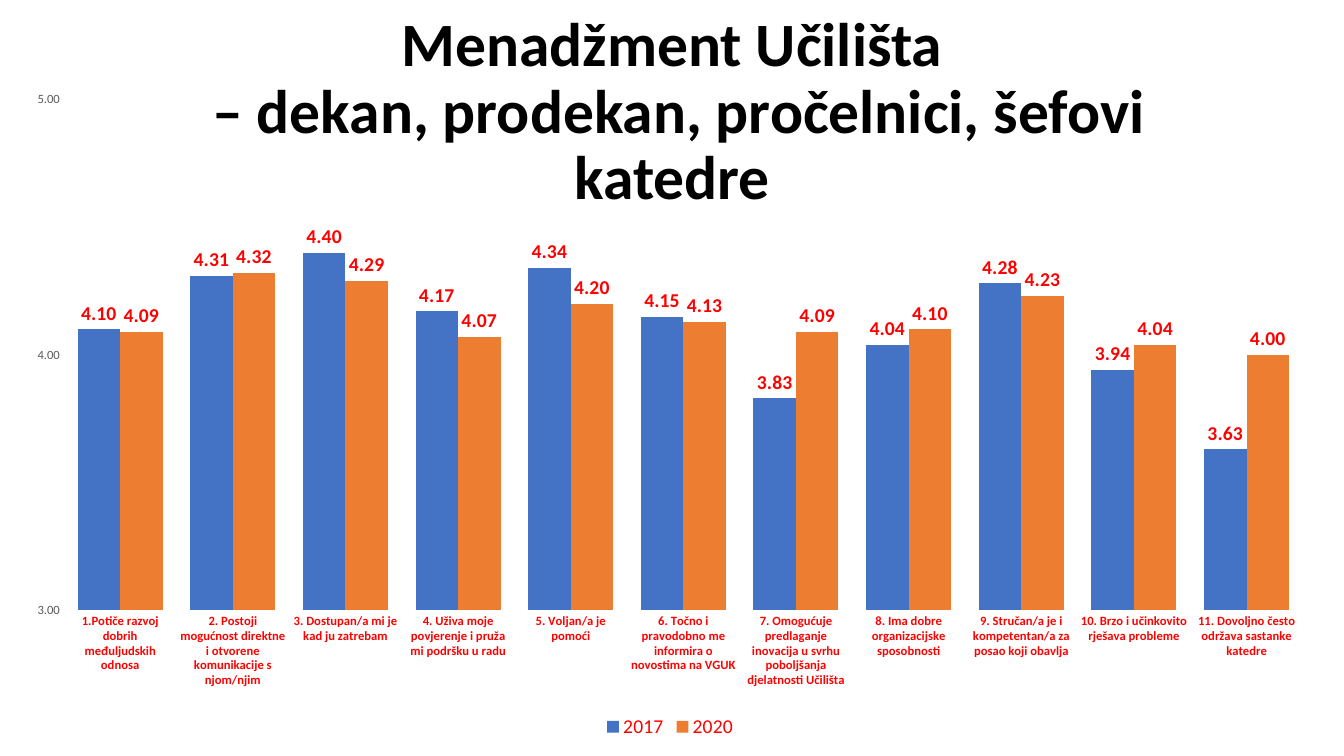
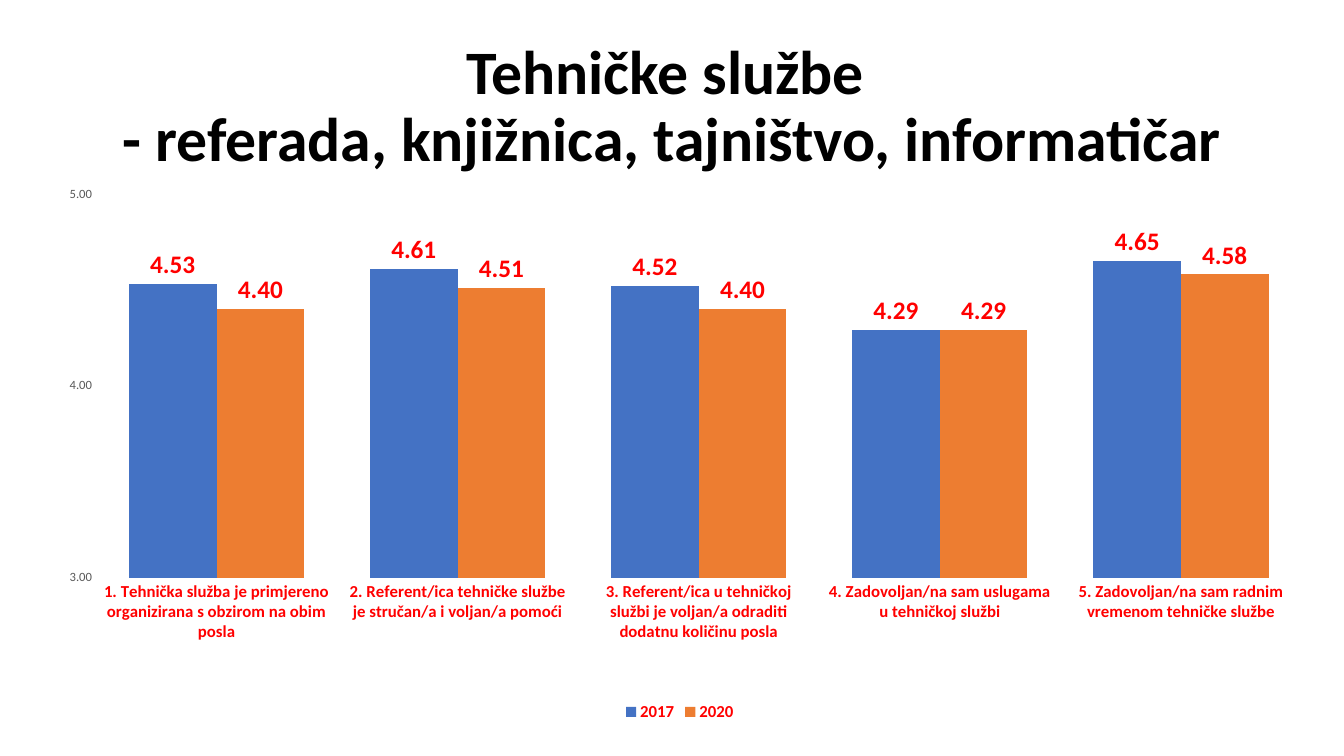
"""Build two survey slides comparing ratings from 2017 and 2020."""
from dataclasses import dataclass

import pptx
import pptx.chart.data
import pptx.dml.color
import pptx.enum.chart
import pptx.enum.text
import pptx.oxml
import pptx.oxml.ns
import pptx.util

Cm = pptx.util.Cm
Pt = pptx.util.Pt

FONT = "Calibri"
COLORS = {
    "title": "000000",
    "accent": "FF0000",
    "scale": "595959",
    "2017": "4472C4",
    "2020": "ED7D31",
}
NUMBER_FORMAT = "0.00"


@dataclass(frozen=True)
class Box:
    left: float
    top: float
    width: float
    height: float

    def lengths(self) -> tuple:
        return Cm(self.left), Cm(self.top), Cm(self.width), Cm(self.height)


@dataclass(frozen=True)
class Rating:
    statement: str
    in_2017: float
    in_2020: float


@dataclass(frozen=True)
class Survey:
    title_lines: tuple[str, ...]
    title_top: float
    title_size: float
    chart_box: Box
    plot_area: Box
    gap_width: int
    statement_size: int
    value_size: int
    legend_size: int
    legend_bold: bool
    ratings: tuple[Rating, ...]


SURVEYS = (
    Survey(
        title_lines=("Menadžment Učilišta", " – dekan, prodekan, pročelnici, šefovi katedre"),
        title_top=1.02,
        title_size=44,
        chart_box=Box(0.28, 2.01, 33.22, 16.71),
        plot_area=Box(0.04, 0.03, 0.94, 0.77),
        gap_width=65,
        statement_size=9,
        value_size=14,
        legend_size=14,
        legend_bold=False,
        ratings=(
            Rating("1.Potiče razvoj dobrih međuljudskih odnosa", 4.10, 4.09),
            Rating("2. Postoji mogućnost direktne i otvorene komunikacije s njom/njim", 4.31, 4.32),
            Rating("3. Dostupan/a mi je kad ju zatrebam", 4.40, 4.29),
            Rating("4. Uživa moje povjerenje i pruža mi podršku u radu", 4.17, 4.07),
            Rating("5. Voljan/a je pomoći", 4.34, 4.20),
            Rating("6. Točno i pravodobno me informira o novostima na VGUK", 4.15, 4.13),
            Rating("7. Omogućuje predlaganje inovacija u svrhu poboljšanja djelatnosti Učilišta", 3.83, 4.09),
            Rating("8. Ima dobre organizacijske sposobnosti", 4.04, 4.10),
            Rating("9. Stručan/a je i kompetentan/a za posao koji obavlja", 4.28, 4.23),
            Rating("10. Brzo i učinkovito rješava probleme", 3.94, 4.04),
            Rating("11. Dovoljno često održava sastanke katedre", 3.63, 4.00),
        ),
    ),
    Survey(
        title_lines=("Tehničke službe ", "- referada, knjižnica, tajništvo, informatičar"),
        title_top=0.89,
        title_size=44.1,
        chart_box=Box(1.14, 4.47, 31.98, 13.82),
        plot_area=Box(0.04, 0.03, 0.95, 0.7),
        gap_width=75,
        statement_size=12,
        value_size=18,
        legend_size=12,
        legend_bold=True,
        ratings=(
            Rating("1. Tehnička služba je primjereno organizirana s obzirom na obim posla", 4.53, 4.40),
            Rating("2. Referent/ica tehničke službe je stručan/a i voljan/a pomoći", 4.61, 4.51),
            Rating("3. Referent/ica u tehničkoj službi je voljan/a odraditi dodatnu količinu posla", 4.52, 4.40),
            Rating("4. Zadovoljan/na sam uslugama u tehničkoj službi", 4.29, 4.29),
            Rating("5. Zadovoljan/na sam radnim vremenom tehničke službe", 4.65, 4.58),
        ),
    ),
)


def rgb(name: str) -> pptx.dml.color.RGBColor:
    return pptx.dml.color.RGBColor.from_string(COLORS[name])


def style_font(font, size: float, color: str, bold: bool = False) -> None:
    font.name = FONT
    font.size = Pt(size)
    font.bold = bold
    font.color.rgb = rgb(color)


def add_title(slide, survey: Survey) -> None:
    title_box = Box(2.34, survey.title_top, 29.21, 3.68)
    frame = slide.shapes.add_textbox(*title_box.lengths()).text_frame
    frame.word_wrap = True
    frame.vertical_anchor = pptx.enum.text.MSO_ANCHOR.MIDDLE
    heading = frame.paragraphs[0]
    heading.alignment = pptx.enum.text.PP_ALIGN.CENTER
    heading.line_spacing = 0.9
    for index, line in enumerate(survey.title_lines):
        if index:
            heading.add_line_break()
        run = heading.add_run()
        run.text = line
        style_font(run.font, survey.title_size, "title", bold=True)


def place_plot(chart, area: Box) -> None:
    plot_area = chart.plots[0]._element.getparent()
    for old_layout in plot_area.findall(pptx.oxml.ns.qn("c:layout")):
        plot_area.remove(old_layout)
    settings = {
        "layoutTarget": "inner", "xMode": "edge", "yMode": "edge",
        "x": area.left, "y": area.top, "w": area.width, "h": area.height,
    }
    children = "".join(f'<c:{tag} val="{value}"/>' for tag, value in settings.items())
    plot_area.insert(0, pptx.oxml.parse_xml(
        f'<c:layout {pptx.oxml.ns.nsdecls("c")}>'
        f"<c:manualLayout>{children}</c:manualLayout></c:layout>"
    ))


def style_axis(axis, size: int, color: str, bold: bool = False) -> None:
    axis.has_major_gridlines = False
    axis.major_tick_mark = pptx.enum.chart.XL_TICK_MARK.NONE
    axis.minor_tick_mark = pptx.enum.chart.XL_TICK_MARK.NONE
    axis.format.line.fill.background()
    style_font(axis.tick_labels.font, size, color, bold)


def style_series(series, value_size: int) -> None:
    series.format.fill.solid()
    series.format.fill.fore_color.rgb = rgb(series.name)
    series.invert_if_negative = False
    labels = series.data_labels
    labels.show_value = True
    labels.number_format = NUMBER_FORMAT
    labels.number_format_is_linked = False
    labels.position = pptx.enum.chart.XL_LABEL_POSITION.OUTSIDE_END
    style_font(labels.font, value_size, "accent", bold=True)


def add_ratings_chart(slide, survey: Survey) -> None:
    data = pptx.chart.data.CategoryChartData(number_format=NUMBER_FORMAT)
    data.categories = [rating.statement for rating in survey.ratings]
    data.add_series("2017", [rating.in_2017 for rating in survey.ratings])
    data.add_series("2020", [rating.in_2020 for rating in survey.ratings])
    chart = slide.shapes.add_chart(
        pptx.enum.chart.XL_CHART_TYPE.COLUMN_CLUSTERED, *survey.chart_box.lengths(), data
    ).chart
    style_font(chart.font, 10, "title")
    chart.has_title = False

    chart.has_legend = True
    chart.legend.position = pptx.enum.chart.XL_LEGEND_POSITION.BOTTOM
    chart.legend.include_in_layout = False
    style_font(chart.legend.font, survey.legend_size, "accent", survey.legend_bold)

    style_axis(chart.category_axis, survey.statement_size, "accent", bold=True)
    scale = chart.value_axis
    style_axis(scale, 9, "scale")
    scale.minimum_scale, scale.maximum_scale, scale.major_unit = 3, 5, 1
    scale.tick_labels.number_format = NUMBER_FORMAT
    scale.tick_labels.number_format_is_linked = False

    columns = chart.plots[0]
    columns.gap_width = survey.gap_width
    columns.overlap = 0
    columns.vary_by_categories = False
    for series in columns.series:
        style_series(series, survey.value_size)
    place_plot(chart, survey.plot_area)


def main() -> None:
    deck = pptx.Presentation()
    deck.slide_width, deck.slide_height = Cm(33.87), Cm(19.05)
    blank_layout = deck.slide_layouts[6]
    for survey in SURVEYS:
        slide = deck.slides.add_slide(blank_layout)
        add_title(slide, survey)
        add_ratings_chart(slide, survey)
    deck.save("out.pptx")


if __name__ == "__main__":
    main()
